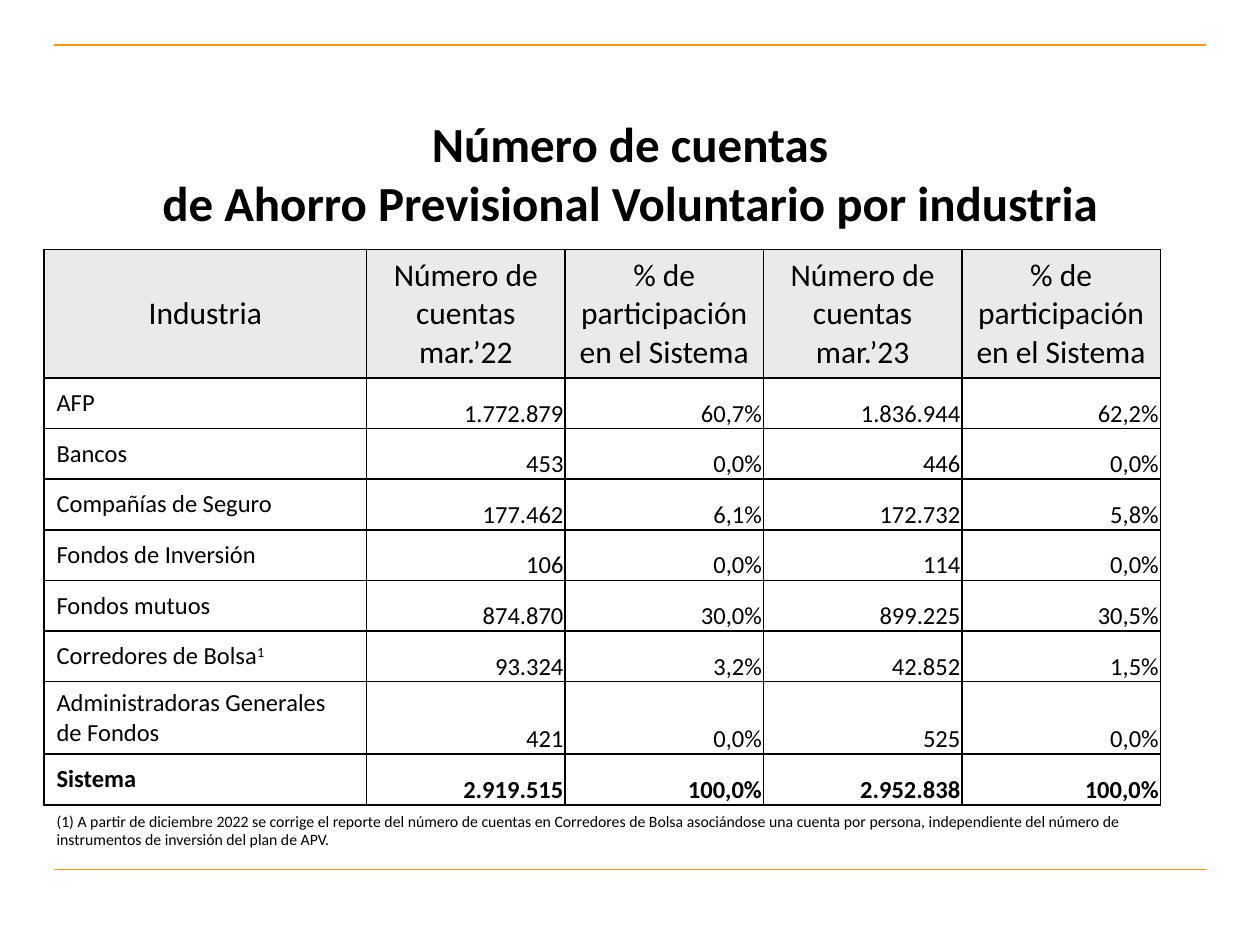
"""Build the slide on voluntary pension savings accounts by industry."""
from lxml.etree import SubElement as Sub
from pptx import Presentation as Deck
from pptx.dml.color import RGBColor as Rgb
from pptx.enum.shapes import MSO_CONNECTOR as Link
from pptx.enum.text import MSO_ANCHOR as Anchor, PP_ALIGN as Align
from pptx.oxml.ns import qn
from pptx.util import Cm, Pt

HUES = {"ink": "000000", "rule": "FF9900", "head": "EAEAEA", "cell": "FFFFFF"}
HEADS = ["Industria",
         "Número de cuentas\nmar.’22", "% de participación en el Sistema",
         "Número de cuentas\nmar.’23", "% de participación en el Sistema"]
ROWS = [
    ["AFP", "1.772.879", "60,7%", "1.836.944", "62,2%"],
    ["Bancos", "453", "0,0%", "446", "0,0%"],
    ["Compañías de Seguro", "177.462", "6,1%", "172.732", "5,8%"],
    ["Fondos de Inversión", "106", "0,0%", "114", "0,0%"],
    ["Fondos mutuos", "874.870", "30,0%", "899.225", "30,5%"],
    ["Corredores de Bolsa", "93.324", "3,2%", "42.852", "1,5%"],
    ["Administradoras Generales de Fondos", "421", "0,0%", "525", "0,0%"],
    ["Sistema", "2.919.515", "100,0%", "2.952.838", "100,0%"],
]
WIDTHS = [6.5, 4, 4, 4, 4]
HEIGHTS = [2.59] + [1.02] * 6 + [1.35, 1.02]
NOTE = ("(1) A partir de diciembre 2022 se corrige el reporte del número de cuentas "
        "en Corredores de Bolsa asociándose una cuenta por persona, independiente "
        "del número de instrumentos de inversión del plan de APV.")


def write(frame, text, size=14, bold=False, align=Align.LEFT, mark=""):
    """Put text in a frame, one paragraph a line, with an optional raised mark."""
    frame.text = text
    for par in frame.paragraphs:
        par.alignment = align
        if mark:
            run = par.add_run()
            run.text = mark
            run._r.get_or_add_rPr().set("baseline", "30000")
        for run in par.runs:
            font = run.font
            font.name, font.size, font.bold = "Calibri", Pt(size), bold
            font.color.rgb = Rgb.from_string(HUES["ink"])


class Page:
    """Hold the style and the current slide."""

    def __init__(self, slide):
        """Keep the slide to draw on."""
        self.slide = slide
        self.shapes = slide.shapes

    def rule(self, top):
        """Draw a thin line across the slide."""
        line = self.shapes.add_connector(
            Link.STRAIGHT, Cm(1.09), Cm(top), Cm(24.31), Cm(top))
        line.line.color.rgb = Rgb.from_string(HUES["rule"])
        line.line.width = Pt(0.75)
        Sub(line._element.spPr, qn("a:effectLst"))

    def title(self, text):
        """Fill and place the title."""
        box = self.shapes.title
        box.left, box.top, box.width, box.height = map(Cm, (1.27, 2.51, 22.86, 2.59))
        frame = box.text_frame
        frame.vertical_anchor = Anchor.MIDDLE
        frame.margin_top, frame.margin_bottom = Cm(0), Cm(0.67)
        write(frame, text, size=28, bold=True, align=Align.CENTER)

    def edge(self, cell):
        """Give a cell four borders, placed ahead of its fill."""
        props = cell._tc.get_or_add_tcPr()
        for spot, side in enumerate(("lnL", "lnR", "lnT", "lnB")):
            line = Sub(props, qn("a:" + side), w=str(Pt(1)))
            fill = Sub(line, qn("a:solidFill"))
            Sub(fill, qn("a:srgbClr"), val=HUES["ink"])
            props.insert(spot, line)

    def cell(self, cell, text, hue, inset, anchor, **form):
        """Fill one table cell."""
        if hue:
            cell.fill.solid()
            cell.fill.fore_color.rgb = Rgb.from_string(HUES[hue])
        else:
            cell.fill.background()
        (cell.margin_left, cell.margin_top,
         cell.margin_right, cell.margin_bottom) = map(Cm, inset)
        cell.vertical_anchor = anchor
        write(cell.text_frame, text, **form)
        self.edge(cell)

    def table(self):
        """Draw the table of accounts and shares."""
        table = self.shapes.add_table(
            len(HEIGHTS), len(WIDTHS), Cm(0.89), Cm(5.03),
            Cm(sum(WIDTHS)), Cm(sum(HEIGHTS))).table
        table.first_row = table.horz_banding = False
        for col, width in zip(table.columns, WIDTHS):
            col.width = Cm(width)
        for row, height in zip(table.rows, HEIGHTS):
            row.height = Cm(height)
        wide, slim = (0.25, 0.13, 0.25, 0.13), (0.03, 0.03, 0.03, 0)
        for c, text in enumerate(HEADS):
            self.cell(table.cell(0, c), text, "head", wide, Anchor.MIDDLE,
                      size=18, align=Align.CENTER)
        for r, (name, *vals) in enumerate(ROWS, 1):
            bold = name == "Sistema"
            self.cell(table.cell(r, 0), name, "cell", wide, Anchor.MIDDLE, bold=bold,
                      mark="1" if name == "Corredores de Bolsa" else "")
            for c, val in enumerate(vals, 1):
                self.cell(table.cell(r, c), val, "cell" if c % 2 else None, slim,
                          Anchor.BOTTOM, bold=bold, align=Align.RIGHT)

    def note(self, text):
        """Add the footnote below the table."""
        box = self.shapes.add_textbox(Cm(0.89), Cm(16.23), Cm(22.5), Cm(1.02))
        box.text_frame.word_wrap = True
        write(box.text_frame, text, size=9)


def main():
    """Make and save the deck."""
    deck = Deck()
    deck.slide_width, deck.slide_height = Cm(25.4), Cm(19.05)
    page = Page(deck.slides.add_slide(deck.slide_layouts[5]))
    for top in (0.91, 17.53):
        page.rule(top)
    page.title("Número de cuentas\vde Ahorro Previsional Voluntario por industria")
    page.table()
    page.note(NOTE)
    deck.save("out.pptx")


if __name__ == "__main__":
    main()
